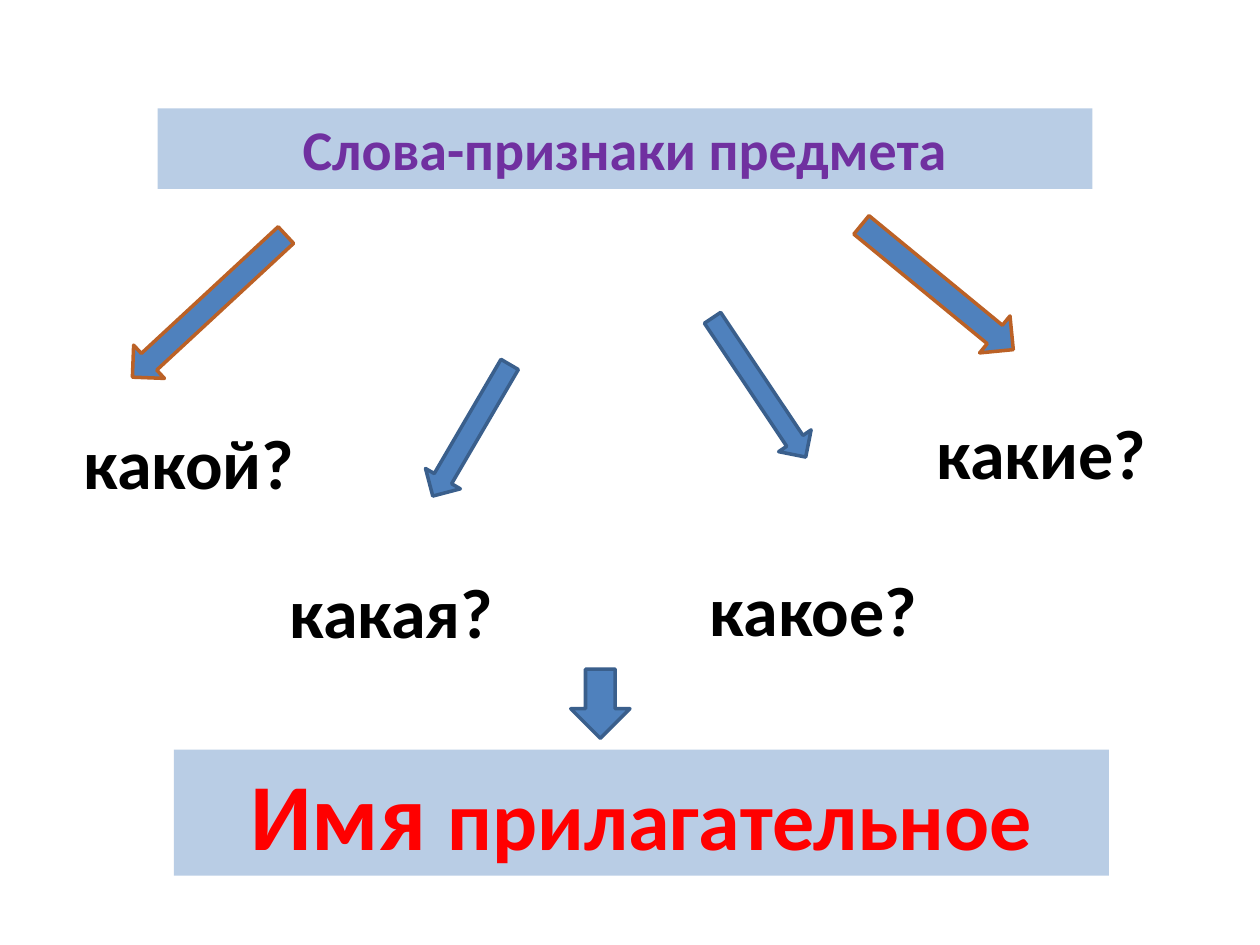
from pptx import Presentation
from pptx.dml.color import RGBColor
from pptx.enum.shapes import MSO_SHAPE
from pptx.enum.text import MSO_ANCHOR, MSO_AUTO_SIZE, PP_ALIGN
from pptx.util import Inches, Pt

BAND, ARROW, BLUE, ORANGE = "B9CDE5", "4F81BD", "3A5F8C", "BB6126"
PURPLE, RED, BLACK = "7030A0", "FF0000", "000000"


def rgb(value):
    return RGBColor.from_string(value)


def inches(box):
    return [Inches(v) for v in box]


def paint(sp, color):
    sp.fill.solid()
    sp.fill.fore_color.rgb = rgb(color)


def write(sp, parts, color):
    tf = sp.text_frame
    tf.word_wrap = True
    tf.auto_size = MSO_AUTO_SIZE.NONE
    tf.vertical_anchor = MSO_ANCHOR.TOP
    p = tf.paragraphs[0]
    p.alignment = PP_ALIGN.CENTER
    for text, size in parts:
        r = p.add_run()
        r.text = text
        r.font.name = "Calibri"
        r.font.size = Pt(size)
        r.font.bold = True
        r.font.color.rgb = rgb(color)


def add_heading(s, box, text):
    sp = s.shapes.title
    sp.left, sp.top, sp.width, sp.height = inches(box)
    paint(sp, BAND)
    write(sp, [(text, 32)], PURPLE)


def add_conclusion(s, box, parts):
    sp = s.shapes.add_shape(MSO_SHAPE.RECTANGLE, *inches(box))
    sp.shadow.inherit = False
    sp.line.fill.background()
    paint(sp, BAND)
    write(sp, parts, RED)


def add_question(s, box, text):
    write(s.shapes.add_textbox(*inches(box)), [(text, 40)], BLACK)


def add_arrow(s, box, angle, outline):
    sp = s.shapes.add_shape(MSO_SHAPE.DOWN_ARROW, *inches(box))
    sp.shadow.inherit = False
    sp.rotation = angle
    paint(sp, ARROW)
    sp.line.color.rgb = rgb(outline)
    sp.line.width = Pt(2)


def main():
    prs = Presentation()
    prs.slide_width, prs.slide_height = Inches(10), Inches(7.5)
    s = prs.slides.add_slide(prs.slide_layouts[5])

    add_heading(s, (1.25, 0.86, 7.42, 0.64), "Слова-признаки предмета")
    add_conclusion(s, (1.38, 5.95, 7.42, 1),
                   [("Имя ", 54), ("прилагательное", 48)])

    questions = [
        ("какой?", (0.27, 3.28, 2.46, 0.77)),
        ("какая?", (1.93, 4.46, 2.35, 0.77)),
        ("какое?", (5, 4.45, 2.91, 0.77)),
        ("какие?", (6.88, 3.2, 2.77, 0.77)),
    ]
    for text, box in questions:
        add_question(s, box, text)

    arrows = [
        ((4.53, 5.31, 0.47, 0.55), 0, BLUE),
        ((1.48, 1.6, 0.36, 1.66), 47.2, ORANGE),
        ((3.58, 2.81, 0.32, 1.21), 30.3, BLUE),
        ((5.87, 2.41, 0.31, 1.33), 326.2, BLUE),
        ((7.25, 1.5, 0.38, 1.56), 309.4, ORANGE),
    ]
    for box, angle, outline in arrows:
        add_arrow(s, box, angle, outline)

    prs.save("out.pptx")


if __name__ == "__main__":
    main()
